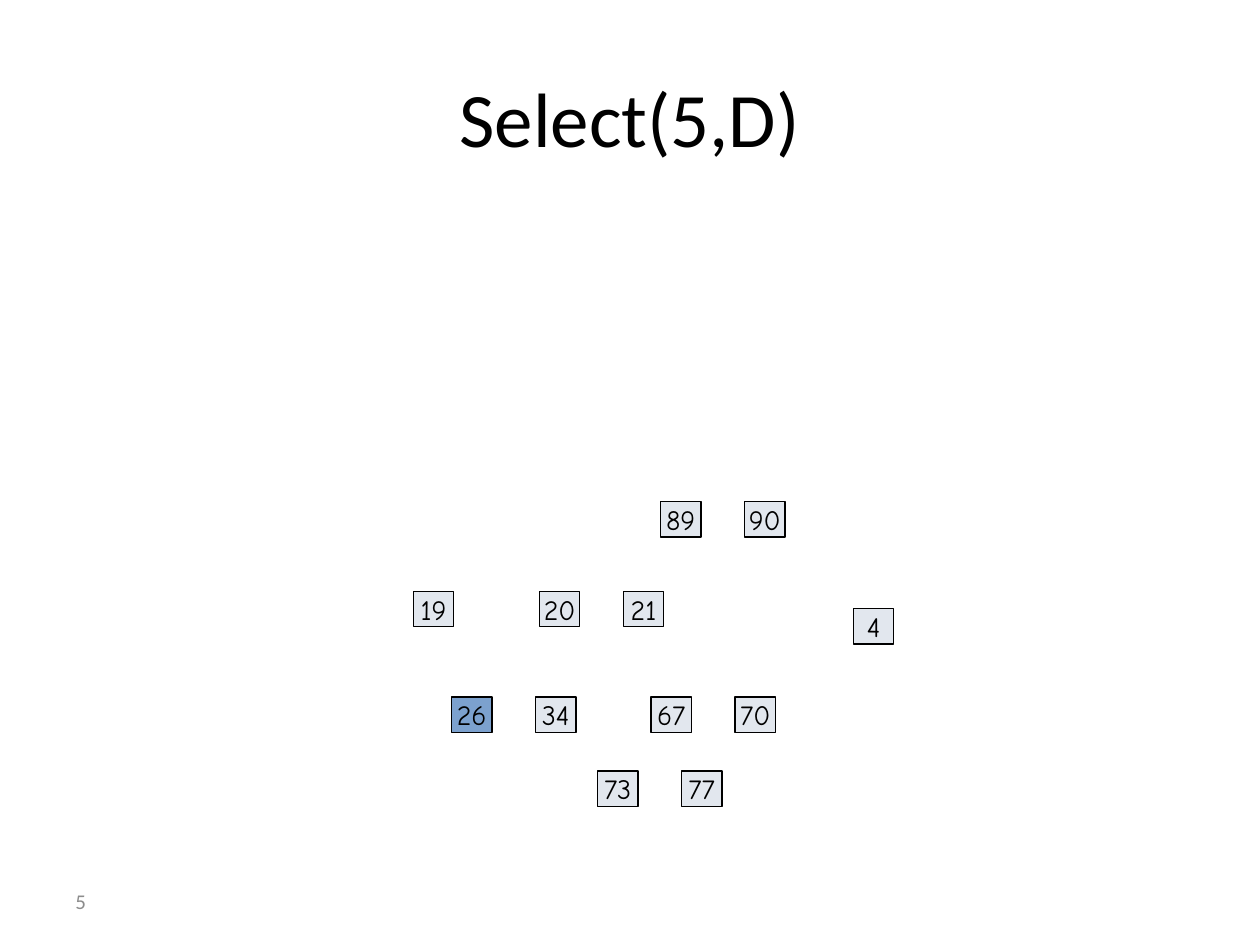
"""Build the Select(5,D) slide with its scattered number boxes."""
from lxml import etree
from pptx import Presentation
from pptx.dml.color import RGBColor
from pptx.enum import shapes, text
from pptx.oxml.ns import qn
from pptx.util import Pt

BLACK = RGBColor(0x00, 0x00, 0x00)
GREY = RGBColor(0x8C, 0x8C, 0x8C)
NAVY = RGBColor(0x1F, 0x49, 0x7D)
BLUE = RGBColor(0x4F, 0x81, 0xBD)

BOX_W, BOX_H, PITCH = 23.2, 20.2, 48
PIVOT = "26"
GROUPS = [
    (377.4, 286.6, ["89", "90"]),
    (341.4, 440.6, ["73", "77"]),
    (372, 398.2, ["67", "70"]),
    (258, 398.2, ["26", "34"]),
    (308.2, 337.8, ["20", "21"]),
    (236.2, 337.8, ["19"]),
    (487.6, 347.8, ["4"]),
]


def set_text(sp, words, font, size, color, align):
    tf = sp.text_frame
    tf.text = words
    tf.vertical_anchor = text.MSO_ANCHOR.MIDDLE
    p = tf.paragraphs[0]
    p.alignment = align
    p.font.name, p.font.size = font, Pt(size)
    p.font.color.rgb = color
    return tf


prs = Presentation()
prs.slide_width, prs.slide_height = Pt(720), Pt(540)
s = prs.slides.add_slide(prs.slide_layouts[5])

title = s.shapes.title
title.left, title.top, title.width, title.height = Pt(36), Pt(21.6), Pt(648), Pt(90)
set_text(title, "Select(5,D)", "Calibri", 44, BLACK, text.PP_ALIGN.CENTER)

number = s.shapes.add_textbox(Pt(36), Pt(500.5), Pt(168), Pt(28.75))
tf = set_text(number, "5", "Calibri", 12, GREY, text.PP_ALIGN.LEFT)
tf.word_wrap = True

for left, top, labels in GROUPS:
    for i, label in enumerate(labels):
        sp = s.shapes.add_shape(shapes.MSO_SHAPE.RECTANGLE, Pt(left + i * PITCH), Pt(top), Pt(BOX_W), Pt(BOX_H))
        sp.shadow.inherit = False
        color, opacity = (BLUE, 74) if label == PIVOT else (NAVY, 13)
        sp.fill.solid()
        sp.fill.fore_color.rgb = color
        rgb = sp.fill._xPr.find(qn("a:solidFill")).find(qn("a:srgbClr"))
        etree.SubElement(rgb, qn("a:alpha"), val=str(opacity * 1000))
        sp.line.color.rgb = BLACK
        sp.line.width = Pt(0.75)
        tf = set_text(sp, label, "Comic Neue", 16, BLACK, text.PP_ALIGN.CENTER)
        tf.word_wrap = False

prs.save("out.pptx")
